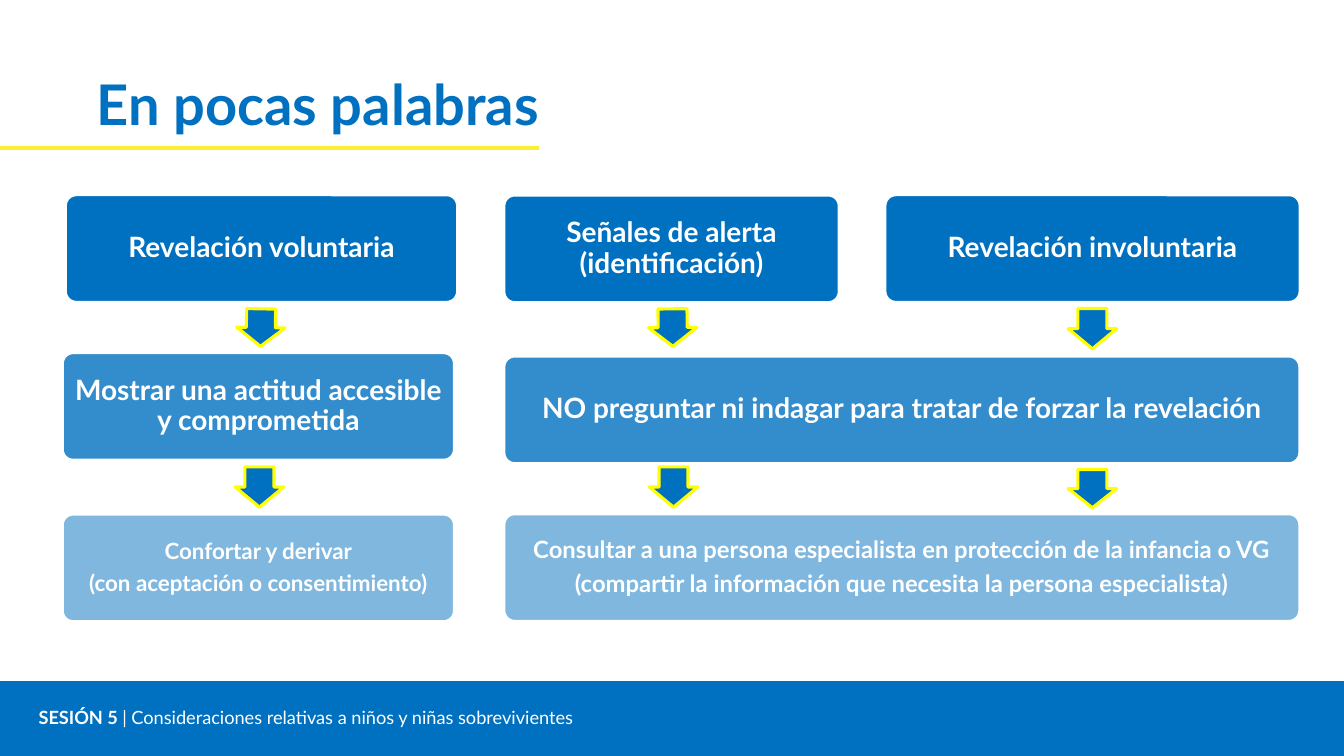
from lxml import etree
from pptx import Presentation
from pptx.dml.color import RGBColor
from pptx.enum.shapes import MSO_CONNECTOR, MSO_SHAPE
from pptx.enum.text import MSO_ANCHOR, MSO_AUTO_SIZE, PP_ALIGN
from pptx.oxml.ns import qn
from pptx.util import Pt

BLUE = RGBColor(0x00, 0x70, 0xC0)
YELLOW = RGBColor(0xFF, 0xFF, 0x00)
RULE_YELLOW = RGBColor(0xFB, 0xEF, 0x33)
WHITE = RGBColor(0xFF, 0xFF, 0xFF)
FONT = "Lato"
LEFT, CENTER = PP_ALIGN.LEFT, PP_ALIGN.CENTER
MIDDLE, BOTTOM = MSO_ANCHOR.MIDDLE, MSO_ANCHOR.BOTTOM
NO_AUTOFIT = MSO_AUTO_SIZE.NONE
RECTANGLE = MSO_SHAPE.RECTANGLE
ROUNDED = MSO_SHAPE.ROUNDED_RECTANGLE
DOWN_ARROW = MSO_SHAPE.DOWN_ARROW
STRAIGHT = MSO_CONNECTOR.STRAIGHT


def write_text(shape, paragraphs, size, color=WHITE, align=LEFT, anchor=MIDDLE,
               line_spacing=1.0, space_after=0, inset_x=7.2, inset_y=3.6):
    frame = shape.text_frame
    frame.word_wrap = True
    frame.auto_size = NO_AUTOFIT
    frame.vertical_anchor = anchor
    frame.margin_left = frame.margin_right = Pt(inset_x)
    frame.margin_top = frame.margin_bottom = Pt(inset_y)
    for index, runs in enumerate(paragraphs):
        paragraph = frame.add_paragraph() if index else frame.paragraphs[0]
        paragraph.alignment = align
        paragraph.line_spacing = line_spacing
        paragraph.space_before = Pt(0)
        paragraph.space_after = Pt(space_after)
        for text, bold in runs:
            run = paragraph.add_run()
            run.text = text
            run.font.name = FONT
            run.font.size = Pt(size)
            run.font.bold = bold
            run.font.color.rgb = color


def add_filled(kind, left, top, width, height, line_color=None, line_width=0):
    shape = slide.shapes.add_shape(kind, Pt(left), Pt(top), Pt(width), Pt(height))
    shape.shadow.inherit = False
    shape.fill.solid()
    shape.fill.fore_color.rgb = BLUE
    if line_color is None:
        shape.line.fill.background()
    else:
        shape.line.color.rgb = line_color
        shape.line.width = Pt(line_width)
    return shape


presentation = Presentation()
presentation.slide_width = Pt(960)
presentation.slide_height = Pt(540)
slide = presentation.slides.add_slide(presentation.slide_layouts[5])

add_filled(RECTANGLE, 0, 486.5, 960, 53.5)
session = slide.shapes.add_textbox(Pt(20.5), Pt(501), Pt(548), Pt(23))
write_text(session, [[("SESIÓN 5 ", True),
                      ("| Consideraciones relativas a niños y niñas sobrevivientes", False)]], 13)

title = slide.shapes.title
title.left, title.top, title.width, title.height = Pt(62), Pt(49.7), Pt(868), Pt(51.8)
write_text(title, [[("En pocas palabras", True)]], 40, color=BLUE, anchor=BOTTOM)

title_rule = slide.shapes.add_connector(STRAIGHT, Pt(0), Pt(106), Pt(385), Pt(106))
title_rule.line.color.rgb = RULE_YELLOW
title_rule.line.width = Pt(3)
etree.SubElement(title_rule._element.spPr, qn("a:effectLst"))

BOX_HEIGHT = 76.7
boxes = [
    (46.8, 139.2, 280, 100, 20, ["Revelación voluntaria"]),
    (44.6, 252, 280, 80, 20, ["Mostrar una actitud accesible y comprometida"]),
    (44.6, 367.3, 280, 50, 16, ["Confortar y derivar", "(con aceptación o consentimiento)"]),
    (360, 139.4, 239.4, 100, 20, ["Señales de alerta (identificación)"]),
    (632.2, 139.2, 296.4, 100, 20, ["Revelación involuntaria"]),
    (360, 254.4, 568.4, 80, 20, ["NO preguntar ni indagar para tratar de forzar la revelación"]),
    (360, 367.1, 568.4, 50, 17, [
        "Consultar a una persona especialista en protección de la infancia o VG",
        "(compartir la información que necesita la persona especialista)"]),
]
for left, top, width, opacity, size, lines in boxes:
    box = add_filled(ROUNDED, left, top, width, BOX_HEIGHT, WHITE, 2)
    box.adjustments[0] = 0.1
    if opacity < 100:
        color = box._element.spPr.find(qn("a:solidFill"))[0]
        etree.SubElement(color, qn("a:alpha"), val=str(opacity * 1000))
    write_text(box, [[(line, True)] for line in lines], size, align=CENTER,
               line_spacing=0.9, space_after=0.35 * size, inset_x=5, inset_y=5)

ARROW_WIDTH = 34.6
arrows = [
    (169, 220.6, 26.8, 1.1),
    (168, 333.5, 28.8, 0),
    (463.2, 220.6, 26.8, -0.6),
    (463.8, 333.5, 28.8, 0),
    (763, 220.4, 28.8, 0),
    (763, 335.3, 27.4, 0),
]
for left, top, height, rotation in arrows:
    arrow = add_filled(DOWN_ARROW, left, top, ARROW_WIDTH, height, YELLOW, 2.25)
    arrow.adjustments[0] = 0.6
    arrow.adjustments[1] = 0.5
    arrow.rotation = rotation

presentation.save("out.pptx")
